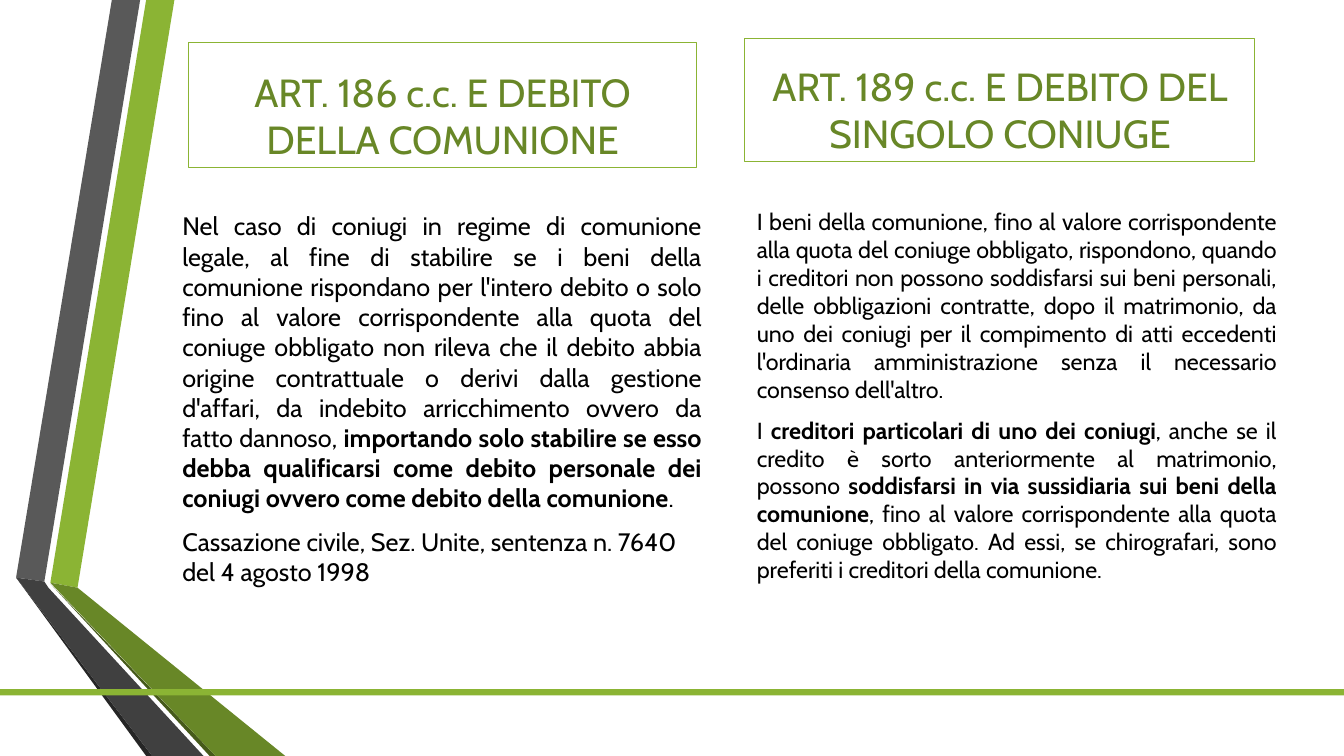
from dataclasses import dataclass

from pptx import Presentation
from pptx.dml.color import RGBColor
from pptx.enum.shapes import MSO_SHAPE
from pptx.enum.text import MSO_ANCHOR, MSO_AUTO_SIZE, PP_ALIGN
from pptx.util import Pt

FONT = "Cabin"
COLORS = {
    "green": "8BB434",
    "olive": "688727",
    "moss": "465A1A",
    "gray": "595959",
    "charcoal": "404040",
    "coal": "262626",
    "black": "000000",
}
PAGE_WIDTH, PAGE_HEIGHT = 960, 540


@dataclass
class Area:
    left: float
    top: float
    width: float
    height: float


@dataclass
class Ribbon:
    color: str
    points: list[tuple[float, float]]


@dataclass
class Span:
    text: str
    bold: bool = False


@dataclass
class Paragraph:
    spans: list[Span]
    align: PP_ALIGN = PP_ALIGN.JUSTIFY


@dataclass
class Column:
    heading: str
    heading_area: Area
    paragraphs: list[Paragraph]
    text_area: Area
    text_size: float


RIBBONS = [
    Ribbon("green", [(36, 416.2), (55.4, 419.8), (124.6, 0), (104.4, 0)]),
    Ribbon("gray", [(100.1, 0), (79.9, 0), (11.5, 412.6), (31.7, 415.4)]),
    Ribbon("coal", [(11.5, 412.6), (104.4, 540), (108.7, 540)]),
    Ribbon("moss", [(36, 416.9), (149.8, 540), (154.1, 540)]),
    Ribbon("olive", [(36, 416.2), (154.1, 540), (203.8, 540), (55.4, 419.8)]),
    Ribbon("charcoal", [(145.4, 540), (34.6, 419.8), (31.7, 415.4), (11.5, 412.6), (108.7, 540)]),
]

COLUMNS = [
    Column(
        "ART. 186 c.c. E DEBITO DELLA COMUNIONE",
        Area(134.64, 30.24, 362.88, 89.28),
        [
            Paragraph([
                Span("Nel caso di coniugi in regime di comunione legale, al fine di stabilire se i beni "
                     "della comunione rispondano per l'intero debito o solo fino al valore corrispondente "
                     "alla quota del coniuge obbligato non rileva che il debito abbia origine contrattuale "
                     "o derivi dalla gestione d'affari, da indebito arricchimento ovvero da fatto dannoso, "),
                Span("importando solo stabilire se esso debba qualificarsi come debito personale dei "
                     "coniugi ovvero come debito della comunione", True),
                Span("."),
            ]),
            Paragraph([Span("Cassazione civile, Sez. Unite, sentenza n. 7640 del 4 agosto 1998")],
                      PP_ALIGN.LEFT),
        ],
        Area(123.12, 146.88, 385.2, 272.16),
        18,
    ),
    Column(
        "ART. 189 c.c. E DEBITO DEL SINGOLO CONIUGE",
        Area(532.08, 27.36, 364.32, 87.84),
        [
            Paragraph([
                Span("I beni della comunione, fino al valore corrispondente alla quota del coniuge "
                     "obbligato, rispondono, quando i creditori non possono soddisfarsi sui beni "
                     "personali, delle obbligazioni contratte, dopo il matrimonio, da uno dei coniugi "
                     "per il compimento di atti eccedenti l'ordinaria amministrazione senza il "
                     "necessario consenso dell'altro."),
            ]),
            Paragraph([
                Span("I "),
                Span("creditori particolari di uno dei coniugi", True),
                Span(", anche se il credito è sorto anteriormente al matrimonio, possono "),
                Span("soddisfarsi in via sussidiaria sui beni della comunione", True),
                Span(", fino al valore corrispondente alla quota del coniuge obbligato. Ad essi, se "
                     "chirografari, sono preferiti i creditori della comunione."),
            ]),
        ],
        Area(533.52, 144.72, 385.2, 298.08),
        16.6,
    ),
]


def rgb(name: str) -> RGBColor:
    return RGBColor.from_string(COLORS[name])


def paint(shape, color: str) -> None:
    shape.shadow.inherit = False
    shape.fill.solid()
    shape.fill.fore_color.rgb = rgb(color)
    shape.line.fill.background()


def draw_ribbon(page, ribbon: Ribbon) -> None:
    start, *others = [(Pt(x), Pt(y)) for x, y in ribbon.points]
    builder = page.shapes.build_freeform(*start)
    builder.add_line_segments(others, close=True)
    paint(builder.convert_to_shape(), ribbon.color)


def add_box(page, area: Area):
    return page.shapes.add_textbox(Pt(area.left), Pt(area.top), Pt(area.width), Pt(area.height))


def write(box, paragraphs: list[Paragraph], size: float, color: str) -> None:
    frame = box.text_frame
    frame.word_wrap = True
    frame.auto_size = MSO_AUTO_SIZE.NONE
    for index, paragraph in enumerate(paragraphs):
        para = frame.add_paragraph() if index else frame.paragraphs[0]
        para.alignment = paragraph.align
        para.space_before = Pt(size * 0.2)
        para.space_after = Pt(6)
        para.font.name = FONT
        para.font.size = Pt(size)
        para.font.color.rgb = rgb(color)
        for span in paragraph.spans:
            run = para.add_run()
            run.text = span.text
            if span.bold:
                run.font.bold = True


def format_heading(box, column: Column) -> None:
    area = column.heading_area
    box.left, box.top = Pt(area.left), Pt(area.top)
    box.width, box.height = Pt(area.width), Pt(area.height)
    box.line.color.rgb = rgb("green")
    box.line.width = Pt(0.75)
    write(box, [Paragraph([Span(column.heading)], PP_ALIGN.CENTER)], 28, "olive")
    box.text_frame.vertical_anchor = MSO_ANCHOR.BOTTOM


def main() -> None:
    deck = Presentation()
    deck.slide_width, deck.slide_height = Pt(PAGE_WIDTH), Pt(PAGE_HEIGHT)
    page = deck.slides.add_slide(deck.slide_layouts[5])

    for ribbon in RIBBONS:
        draw_ribbon(page, ribbon)
    rule = page.shapes.add_shape(MSO_SHAPE.RECTANGLE, 0, Pt(492.2), Pt(PAGE_WIDTH), Pt(4.5))
    paint(rule, "green")

    first, second = COLUMNS
    format_heading(page.shapes.title, first)
    format_heading(add_box(page, second.heading_area), second)
    for column in COLUMNS:
        write(add_box(page, column.text_area), column.paragraphs, column.text_size, "black")

    deck.save("out.pptx")


if __name__ == "__main__":
    main()
